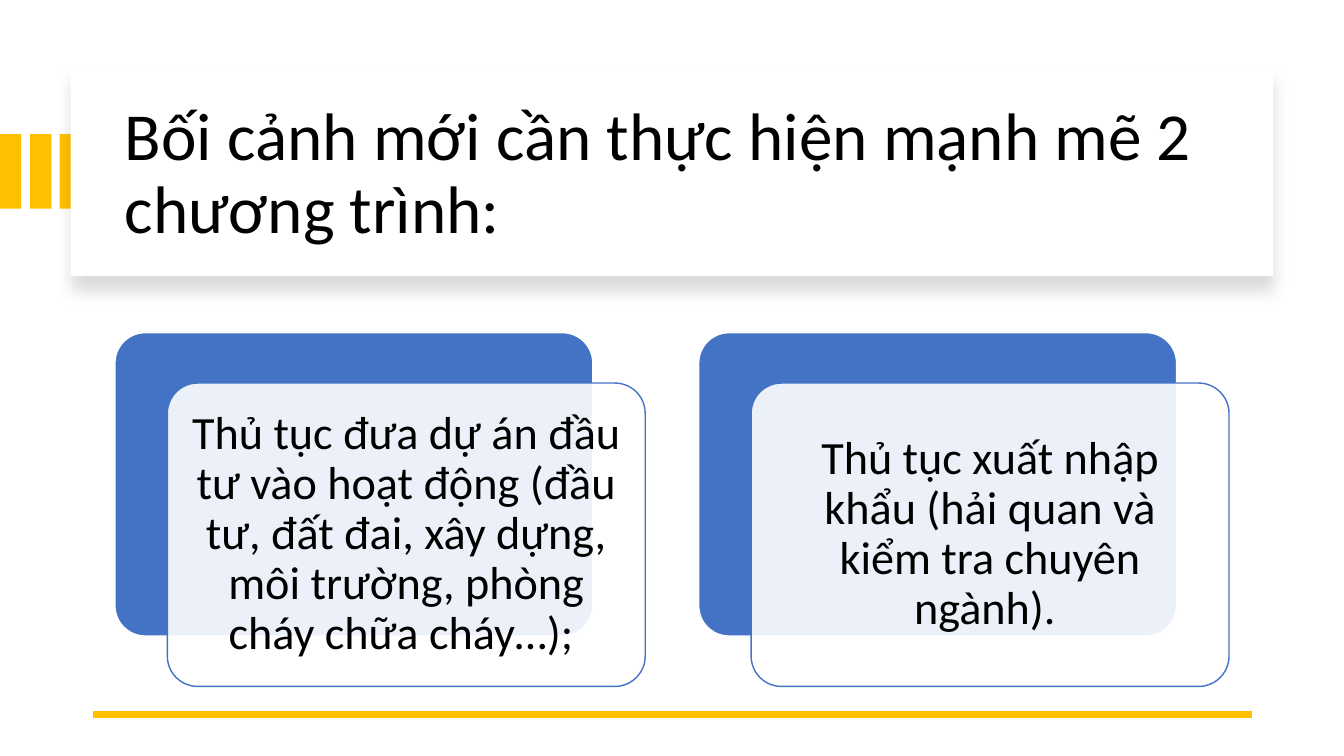
from lxml import etree
from pptx import Presentation
from pptx.dml.color import RGBColor
from pptx.enum.shapes import MSO_CONNECTOR, MSO_SHAPE
from pptx.enum.text import MSO_ANCHOR, PP_ALIGN
from pptx.oxml.ns import qn
from pptx.util import Emu, Pt

PX = 9144  # EMU per px, 100 px to the inch
RECT, ROUNDED = MSO_SHAPE.RECTANGLE, MSO_SHAPE.ROUNDED_RECTANGLE
STRAIGHT, MIDDLE = MSO_CONNECTOR.STRAIGHT, MSO_ANCHOR.MIDDLE
LEFT, CENTER = PP_ALIGN.LEFT, PP_ALIGN.CENTER
COLORS = {"gold": "FFC000", "blue": "4472C4", "white": "FFFFFF", "black": "000000"}
FONT = "Calibri"


def color(name):
    return RGBColor.from_string(COLORS[name])


def px(*lengths):
    return [Emu(length * PX) for length in lengths]


class SlideBuilder:
    def __init__(self, page):
        self.page = page

    def box(self, kind, place, fill, line=None, opacity=None):
        shape = self.page.shapes.add_shape(kind, *px(*place))
        shape.shadow.inherit = False
        shape.fill.solid()
        shape.fill.fore_color.rgb = color(fill)
        if kind == ROUNDED:
            shape.adjustments[0] = 0.1
        if line:
            shape.line.color.rgb = color(line)
            shape.line.width = Pt(1)
        else:
            shape.line.fill.background()
        if opacity:
            tint = shape.fill._xPr.find(qn("a:solidFill"))[0]
            etree.SubElement(tint, qn("a:alpha"), val=str(opacity * 1000))
        return shape

    def drop_shadow(self, shape, opacity, blur, distance):
        effects = shape._element.spPr.find(qn("a:effectLst"))
        shadow = etree.SubElement(
            effects, qn("a:outerShdw"), blurRad=str(Pt(blur)), dist=str(Pt(distance)),
            dir="5400000", algn="t", rotWithShape="0")
        tint = etree.SubElement(shadow, qn("a:srgbClr"), val=COLORS["black"])
        etree.SubElement(tint, qn("a:alpha"), val=str(opacity * 1000))

    def text(self, place, words, size, align, margins):
        frame = self.page.shapes.add_textbox(*px(*place)).text_frame
        across, down = px(*margins)
        layout = {"word_wrap": True, "vertical_anchor": MIDDLE,
                  "margin_left": across, "margin_right": across,
                  "margin_top": down, "margin_bottom": down}
        for name, value in layout.items():
            setattr(frame, name, value)
        para = frame.paragraphs[0]
        for name, value in {"alignment": align, "line_spacing": 0.9}.items():
            setattr(para, name, value)
        span = para.add_run()
        span.text = words
        for name, value in {"name": FONT, "size": Pt(size)}.items():
            setattr(span.font, name, value)
        span.font.color.rgb = color("black")

    def rule(self, start, end, tint, width):
        line = self.page.shapes.add_connector(STRAIGHT, *px(*start, *end))
        line.line.color.rgb = color(tint)
        line.line.width = Pt(width)
        etree.SubElement(line._element.spPr, qn("a:effectLst"))


def main():
    deck = Presentation()
    deck.slide_width, deck.slide_height = px(1333, 750)
    builder = SlideBuilder(deck.slides.add_slide(deck.slide_layouts[6]))

    # Gold bars at the left edge
    for index in range(3):
        builder.box(RECT, (round(index * 29.5), 133, 21, 74), "gold")

    # Title card
    card = builder.box(RECT, (70, 67, 1193, 207), "white")
    builder.drop_shadow(card, opacity=15, blur=11, distance=10)
    builder.text((114, 89, 1113, 170),
                 "Bối cảnh mới cần thực hiện mạnh mẽ 2 chương trình:", 48, LEFT, (10, 5))

    # Rule at the foot
    builder.rule((1242, 709), (92, 709), "gold", 4.5)

    # The two programmes: a blue card with a translucent card over it
    programmes = [
        "Thủ tục đưa dự án đầu tư vào hoạt động (đầu tư, đất đai, xây dựng, "
        "môi trường, phòng cháy chữa cháy…); ",
        "Thủ tục xuất nhập khẩu (hải quan và kiểm tra chuyên ngành). ",
    ]
    for index, words in enumerate(programmes):
        left = 114 + index * 579
        builder.box(ROUNDED, (left, 330, 474, 301), "blue", "white")
        builder.box(ROUNDED, (left + 52, 380, 474, 301), "white", "blue", opacity=90)
        builder.text((left + 61, 389, 456, 283), words, 33, CENTER, (14, 14))

    deck.save("out.pptx")


if __name__ == "__main__":
    main()
